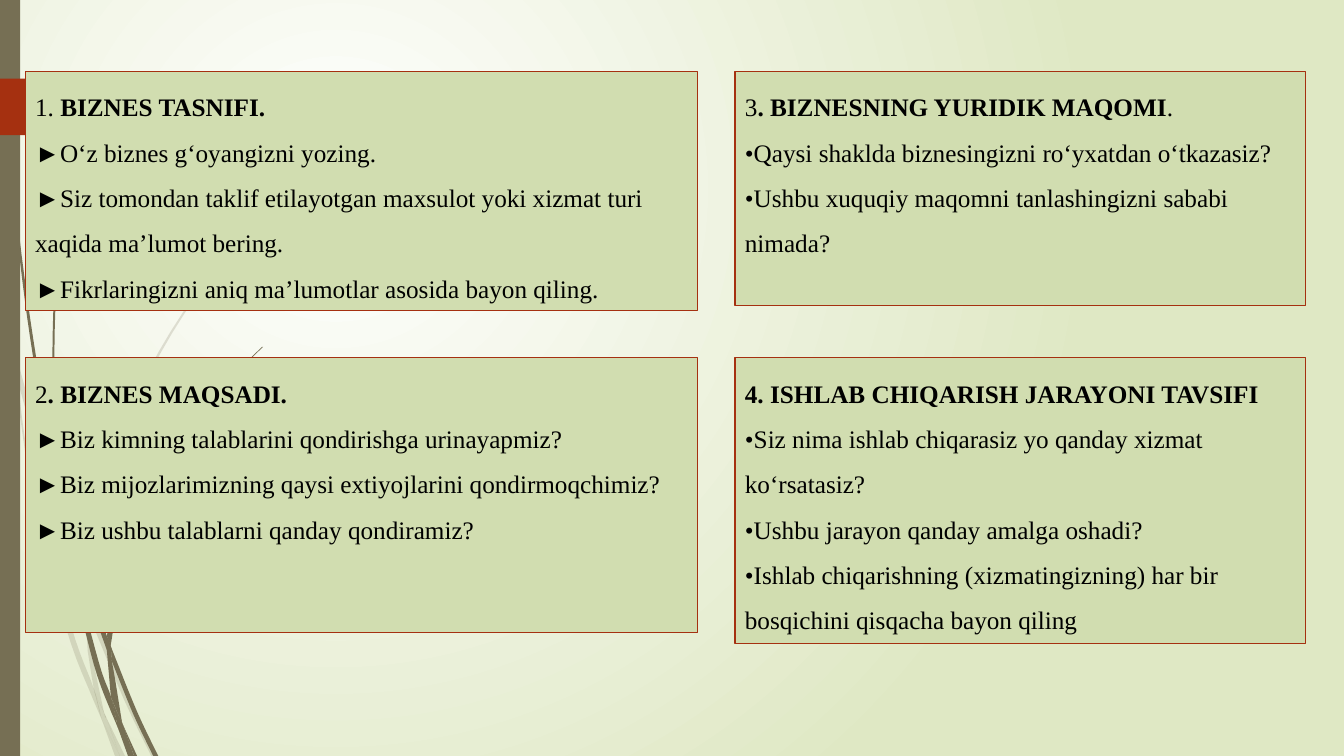
from dataclasses import dataclass

from lxml import etree
from pptx import Presentation
from pptx.dml.color import RGBColor
from pptx.enum.shapes import MSO_SHAPE
from pptx.enum.text import MSO_ANCHOR, PP_ALIGN
from pptx.oxml.ns import qn
from pptx.util import Inches, Pt

RECT = MSO_SHAPE.RECTANGLE
TOP = MSO_ANCHOR.TOP
LEFT = PP_ALIGN.LEFT


@dataclass(frozen=True)
class Theme:
    font: str = "Times New Roman"
    size: int = 18
    ink: str = "000000"
    paper: str = "FFFFFF"
    edge: str = "DFE8C4"
    box: str = "D1DDB0"
    stem: str = "766F54"
    red: str = "A53010"


THEME = Theme()

# Each blade is a pair of edges: one running forward, one running back.
PALE = [
    ([(0, 2.82), (.09, 3.22), (.11, 3.5)], [(.1, 3.44), (0, 2.99)]),
    ([(.14, 3.45), (.62, 5.2), (.85, 5.86)], [(.84, 5.99), (.58, 5.22), (.17, 3.76)]),
    ([(.88, 5.96), (.92, 6.07), (1.27, 6.92), (1.55, 7.5)],
     [(1.5, 7.5), (1.23, 6.94), (.88, 6.1)]),
    ([(1.05, 7.11), (1.24, 7.5)], [(1.19, 7.5)]),
    ([(.11, 3.5), (.17, 3.76), (.31, 4.69), (.7, 6.19), (.93, 6.83), (1.01, 7.14)],
     [(.92, 6.93), (.65, 6.21), (.28, 4.7)]),
    ([(.84, 5.99), (.88, 6.08), (.91, 6.46), (1.03, 7.06), (1.05, 7.11)],
     [(.96, 6.92), (.93, 6.83), (.87, 6.46)]),
    ([(.88, 5.96), (.88, 5.84), (1.1, 4.62), (1.6, 3.49), (2.29, 2.45), (2.68, 1.98),
      (3.12, 1.54)],
     [(3.12, 1.53), (2.68, 1.97), (2.28, 2.44), (1.58, 3.48), (1.07, 4.61), (.85, 5.84)]),
    ([(1.01, 7.14), (1.19, 7.5)], [(1.14, 7.5)]),
    ([(.93, 6.83), (.96, 6.92), (1.05, 7.11), (1.19, 7.5)], [(1.01, 7.14), (.99, 7.07)]),
]
DARK = [
    ([(.04, 0), (.05, .48), (.08, 1.09), (.19, 2.32), (.36, 3.55), (.55, 4.53), (.57, 4.81)],
     [(.56, 4.77), (.33, 3.55), (.17, 2.33), (.07, 1.1), (.04, .48), (.03, 0)]),
    ([(.6, 4.72), (.93, 5.9), (1.06, 6.31)], [(1.06, 6.45), (.88, 5.92), (.64, 5.05)]),
    ([(1.1, 6.41), (1.13, 6.49), (1.36, 7.06), (1.57, 7.5)],
     [(1.52, 7.5), (1.32, 7.08), (1.11, 6.56)]),
    ([(.57, 4.77), (.64, 5.05), (.72, 5.56), (.98, 6.57), (1.1, 6.91), (1.17, 7.22)],
     [(1.11, 7.08), (.93, 6.59), (.68, 5.57)]),
    ([(.7, 1.41), (.63, 1.93), (.58, 2.45), (.54, 3.49), (.58, 4.53), (.6, 4.72)],
     [(.55, 4.49), (.52, 3.49), (.56, 2.45), (.62, 1.93)]),
    ([(1.22, 7.19), (1.36, 7.5)], [(1.33, 7.5)]),
    ([(1.1, 6.41), (1.11, 6.33), (1.25, 5.52), (1.58, 4.76), (2.05, 4.06), (2.31, 3.74),
      (2.61, 3.44)],
     [(2.6, 3.44), (2.31, 3.73), (2.04, 4.05), (1.56, 4.74), (1.22, 5.51), (1.06, 6.31)]),
    ([(1.17, 7.22), (1.31, 7.5)], [(1.27, 7.5)]),
    ([(1.06, 6.45), (1.11, 6.56), (1.21, 7.16), (1.22, 7.19)], [(1.16, 7.06), (1.1, 6.91)]),
    ([(1.06, 6.31), (1.1, 6.41), (1.11, 6.56)], [(1.06, 6.45)]),
    ([(1.1, 6.91), (1.16, 7.06), (1.22, 7.19), (1.33, 7.5)],
     [(1.3, 7.5), (1.17, 7.22), (1.16, 7.17)]),
]

COLS = [(.25, 6.67), (7.29, 5.66)]
ROWS = [.71, 3.55]
# Column, row, height, then paragraphs of (text, bold) runs.
BOXES = [
    (0, 0, 2.37, [
        [("1. ", False), ("BIZNЕS TASNIFI.", True)],
        [("►O‘z biznes g‘oyangizni yozing.", False)],
        [("►Siz tomondan taklif etilayotgan maxsulot yoki xizmat turi xaqida "
          "ma’lumot bering.\n►Fikrlaringizni aniq ma’lumotlar asosida bayon qiling.", False)],
    ]),
    (0, 1, 2.73, [
        [("2", False), (". BIZNЕS MAQSADI.", True)],
        [("►Biz kimning talablarini qondirishga urinayapmiz?", False)],
        [("►Biz mijozlarimizning qaysi extiyojlarini qondirmoqchimiz?", False)],
        [("►Biz ushbu talablarni qanday qondiramiz?", False)],
    ]),
    (1, 0, 2.32, [
        [("3", False), (". BIZNЕSNING YURIDIK MAQOMI", True), (".", False)],
        [("•Qaysi shaklda biznesingizni ro‘yxatdan o‘tkazasiz?\n"
          "•Ushbu xuquqiy maqomni tanlashingizni sababi nimada?", False)],
    ]),
    (1, 1, 2.83, [
        [("4. ISHLAB CHIQARISH JARAYONI TAVSIFI", True)],
        [("•Siz nima ishlab chiqarasiz yo qanday xizmat ko‘rsatasiz?\n"
          "•Ushbu jarayon qanday amalga oshadi?\n"
          "•Ishlab chiqarishning (xizmatingizning) har bir bosqichini qisqacha "
          "bayon qiling", False)],
    ]),
]


def rgb(code):
    return RGBColor.from_string(code)


def paint(shape, fill, line=None, alpha=None):
    shape.shadow.inherit = False
    shape.fill.solid()
    shape.fill.fore_color.rgb = rgb(fill)
    if alpha is not None:
        tint = shape._element.spPr.find(qn("a:solidFill"))[0]
        etree.SubElement(tint, qn("a:alpha"), val=str(alpha * 1000))
    if line:
        shape.line.color.rgb = rgb(line)
        shape.line.width = Pt(.75)
    else:
        shape.line.fill.background()


def smooth(edge, steps=6):
    """Return points on a Catmull-Rom curve through the edge."""
    pts = [edge[0], *edge, edge[-1]]
    curve = [edge[0]]
    for a, b, c, d in zip(pts, pts[1:], pts[2:], pts[3:]):
        for n in range(1, steps + 1):
            t = n / steps
            curve.append(tuple(
                (2 * q + (r - p) * t + (2 * p - 5 * q + 4 * r - s) * t ** 2
                 + (3 * q - p - 3 * r + s) * t ** 3) / 2
                for p, q, r, s in zip(a, b, c, d)))
    return curve


def outline(shapes, points, **look):
    first, *rest = [(Inches(x), Inches(y)) for x, y in points]
    pen = shapes.build_freeform(*first)
    pen.add_line_segments(rest)
    paint(pen.convert_to_shape(), **look)


def grass(slide, blades, alpha=None):
    group = slide.shapes.add_group_shape()
    for there, back in blades:
        outline(group.shapes, smooth(there) + smooth(back), fill=THEME.stem, alpha=alpha)


def block(slide, x, y, w, h, **look):
    shape = slide.shapes.add_shape(RECT, Inches(x), Inches(y), Inches(w), Inches(h))
    paint(shape, **look)
    return shape


def write(para, text, bold=False, size=THEME.size, color=THEME.ink):
    for n, part in enumerate(text.split("\n")):
        if n:
            para.add_line_break()
        run = para.add_run()
        run.text = part
        run.font.name = THEME.font
        run.font.size = Pt(size)
        run.font.bold = bold
        run.font.color.rgb = rgb(color)


def panel(slide, col, row, height, paras):
    x, w = COLS[col]
    frame = block(slide, x, ROWS[row], w, height, fill=THEME.box, line=THEME.red).text_frame
    frame.word_wrap = True
    frame.vertical_anchor = TOP
    for n, runs in enumerate(paras):
        para = frame.add_paragraph() if n else frame.paragraphs[0]
        para.alignment = LEFT
        para.line_spacing = 1.5
        for text, bold in runs:
            write(para, text, bold=bold)


def backdrop(slide):
    fill = slide.background.fill
    fill.gradient()
    for stop, code in zip(fill.gradient_stops, (THEME.paper, THEME.edge)):
        stop.color.rgb = rgb(code)
    grad = slide._element.find(".//" + qn("a:gradFill"))
    grad.remove(grad.find(qn("a:lin")))
    glow = etree.SubElement(grad, qn("a:path"))
    glow.set("path", "circle")
    etree.SubElement(glow, qn("a:fillToRect"), l="50000", t="50000", r="100000", b="100000")


def main():
    deck = Presentation()
    deck.slide_width, deck.slide_height = Inches(13.33), Inches(7.5)
    slide = deck.slides.add_slide(deck.slide_layouts[6])
    backdrop(slide)
    grass(slide, PALE, alpha=20)
    grass(slide, DARK)
    block(slide, 0, 0, .2, 7.5, fill=THEME.stem)
    outline(slide.shapes, [(0, .78), (1.46, .78), (1.74, 1.06), (1.46, 1.34), (0, 1.34)],
            fill=THEME.red)
    for box in BOXES:
        panel(slide, *box)
    deck.save("out.pptx")


if __name__ == "__main__":
    main()
